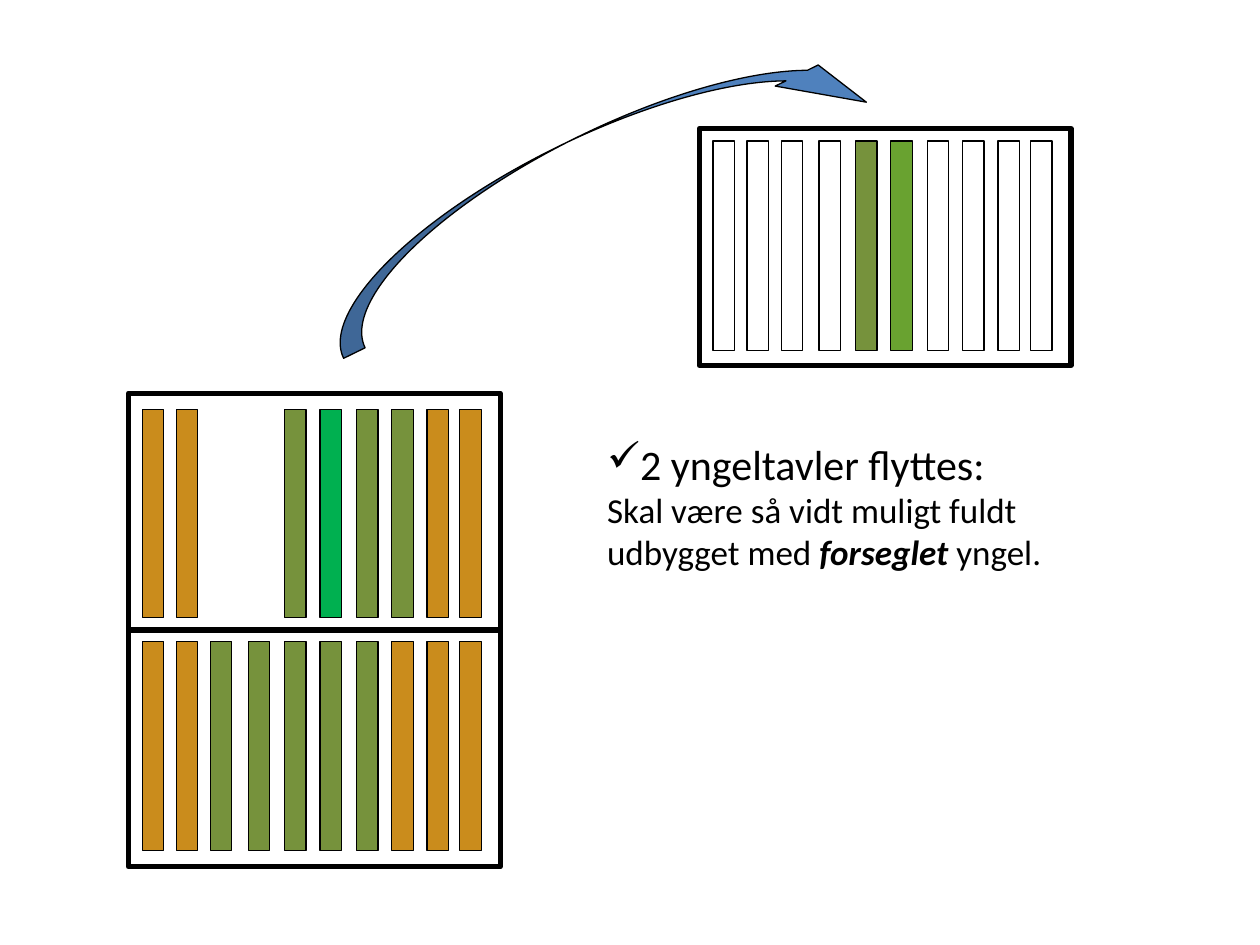
from pptx import Presentation
from pptx.dml.color import RGBColor
from pptx.enum.shapes import MSO_SHAPE
from pptx.oxml.ns import qn
from pptx.util import Inches, Pt
from lxml.etree import SubElement

COLORS = {
    "black": "000000", "white": "FFFFFF", "arrow": "4F81BD",
    "food": "CA8C1C", "brood": "76923C", "queen": "00B050", "moved": "69A230",
}

# Hive boxes: left, top, comb top offset, comb height, ten comb slots
# ("empty" is an unfilled comb, None is a vacant slot)
BOX_WIDTH, BOX_HEIGHT, COMB_WIDTH = 2.95, 1.88, 0.17
SLOT_OFFSETS = [0.11, 0.38, 0.65, 0.95, 1.24, 1.52, 1.81, 2.09, 2.37, 2.63]
HIVE_BOXES = [
    (1.02, 5.0, 0.09, 1.66, ["food"] * 2 + ["brood"] * 5 + ["food"] * 3),
    (5.55, 1.02, 0.1, 1.66, ["empty"] * 4 + ["brood", "moved"] + ["empty"] * 4),
    (1.02, 3.12, 0.13, 1.65, ["food"] * 2 + [None] * 2
     + ["brood", "queen", "brood", "brood"] + ["food"] * 2),
]

# Text paragraphs: size, bullet, runs as (text, emphasised)
INSTRUCTIONS = [
    (24, "✓", [("2 yngeltavler flyttes:", False)]),
    (20, None, [("Skal være så vidt muligt fuldt udbygget med ", False),
                ("forseglet", True), (" yngel.", False)]),
]


def rgb(name):
    return RGBColor.from_string(COLORS[name])


def add_outlined(shapes, kind, left, top, width, height, fill, line_width):
    shape = shapes.add_shape(kind, Inches(left), Inches(top), Inches(width), Inches(height))
    shape.shadow.inherit = False
    if fill == "empty":
        shape.fill.background()
    else:
        shape.fill.solid()
        shape.fill.fore_color.rgb = rgb(fill)
    shape.line.color.rgb = rgb("black")
    shape.line.width = Pt(line_width)
    return shape


def add_hive_box(slide, left, top, comb_offset, comb_height, combs):
    hive = slide.shapes.add_group_shape().shapes
    add_outlined(hive, MSO_SHAPE.RECTANGLE, left, top, BOX_WIDTH, BOX_HEIGHT, "white", 3)
    for offset, comb in zip(SLOT_OFFSETS, combs):
        if comb:
            add_outlined(hive, MSO_SHAPE.RECTANGLE, left + offset, top + comb_offset,
                         COMB_WIDTH, comb_height, comb, 0.75)


def add_instructions(slide):
    frame = slide.shapes.add_textbox(Inches(4.22), Inches(3.43), Inches(5), Inches(1.18)).text_frame
    frame.word_wrap = True
    for index, (size, bullet, runs) in enumerate(INSTRUCTIONS):
        paragraph = frame.paragraphs[0] if index == 0 else frame.add_paragraph()
        paragraph.level = 1
        properties = paragraph._p.get_or_add_pPr()
        properties.set("marL", str(Inches(0.5)))
        properties.set("indent", "0")
        if bullet:
            SubElement(properties, qn("a:buChar")).set("char", bullet)
        else:
            SubElement(properties, qn("a:buNone"))
        paragraph.font.name = "Calibri"
        paragraph.font.size = Pt(size)
        paragraph.font.color.rgb = rgb("black")
        for text, emphasised in runs:
            run = paragraph.add_run()
            run.text = text
            if emphasised:
                run.font.bold = run.font.italic = True


def add_move_arrow(slide):
    arrow = add_outlined(slide.shapes, MSO_SHAPE.CURVED_RIGHT_ARROW,
                         4.34, -0.96, 0.76, 4.81, "arrow", 0.75)
    arrow.rotation = 243.9
    arrow._element.spPr.find(qn("a:xfrm")).set("flipH", "1")
    for index, value in enumerate([0.25, 0.5, 0.57]):
        arrow.adjustments[index] = value


def main():
    presentation = Presentation()
    presentation.slide_width, presentation.slide_height = Inches(10), Inches(7.5)
    slide = presentation.slides.add_slide(presentation.slide_layouts[6])
    for hive_box in HIVE_BOXES:
        add_hive_box(slide, *hive_box)
    add_instructions(slide)
    add_move_arrow(slide)
    presentation.save("out.pptx")


if __name__ == "__main__":
    main()
